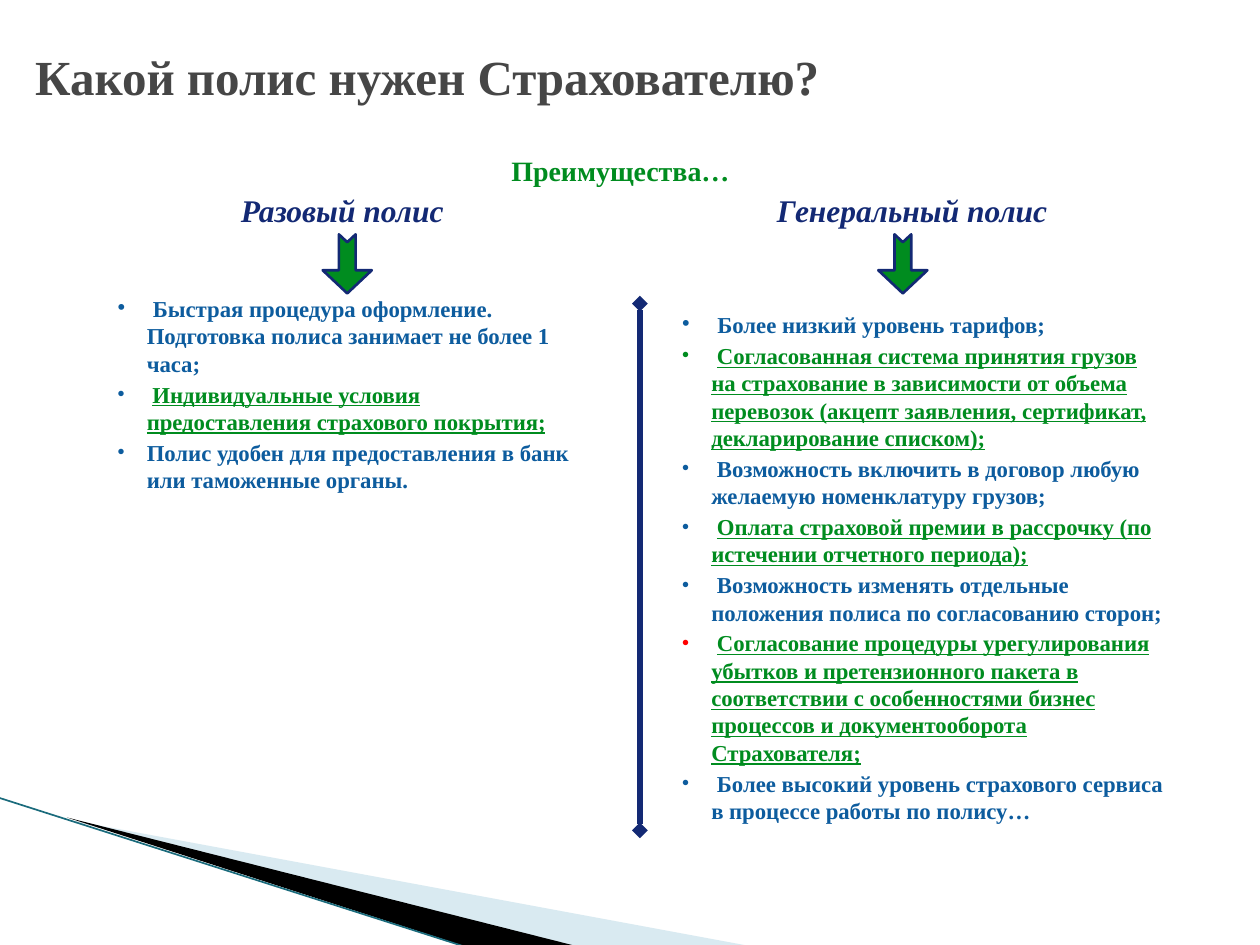
import pptx
import pptx.util
import pptx.dml.color
import pptx.enum.dml
import pptx.enum.shapes
import pptx.enum.text
import pptx.oxml
import pptx.oxml.ns
from lxml import etree
from pptx.util import Cm, Pt

COLORS = {"title": "464646", "green": "008C1F", "navy": "132974", "blue": "0D5C9E",
          "red": "FF0000", "pale": "A0CBDC", "edge": "1A6B7C", "black": "000000"}
FONT = "Times New Roman"

# Each item: colour of the bullet, lead before the text, text, highlighted or not
SINGLE_POLICY = [
    ("blue", " ", "Быстрая процедура оформление. Подготовка полиса занимает не более 1 часа;", False),
    ("blue", " ", "Индивидуальные условия предоставления страхового покрытия;", True),
    ("blue", "", "Полис удобен для предоставления в банк или таможенные органы.", False),
]
GENERAL_POLICY = [
    ("blue", " ", "Более низкий уровень тарифов;", False),
    ("green", " ", "Согласованная система принятия грузов на страхование в зависимости от объема "
     "перевозок (акцепт заявления, сертификат, декларирование списком);", True),
    ("blue", " ", "Возможность включить в договор любую желаемую номенклатуру грузов;", False),
    ("blue", " ", "Оплата страховой премии в рассрочку (по истечении отчетного периода);", True),
    ("blue", " ", "Возможность изменять отдельные положения полиса по согласованию сторон;", False),
    ("red", " ", "Согласование процедуры урегулирования убытков и претензионного пакета в "
     "соответствии с особенностями бизнес процессов и документооборота Страхователя;", True),
    ("blue", " ", "Более высокий уровень страхового сервиса в процессе работы по полису…", False),
]


def rgb(name):
    return pptx.dml.color.RGBColor.from_string(COLORS[name])


def add_child(parent, tag, **attributes):
    child = etree.SubElement(parent, pptx.oxml.ns.qn(tag))
    for key, value in attributes.items():
        child.set(key, value)
    return child


def add_span(para, text, size, color, italic=False, underline=False):
    span = para.add_run()
    span.text = text
    font = span.font
    font.name, font.size, font.bold = FONT, Pt(size), True
    font.italic, font.underline = italic, underline
    font.color.rgb = rgb(color)


def add_box(page, left, top, width, height, wrap=True):
    box = page.shapes.add_textbox(Cm(left), Cm(top), Cm(width), Cm(height))
    box.text_frame.word_wrap = wrap
    box.text_frame.vertical_anchor = pptx.enum.text.MSO_ANCHOR.MIDDLE
    return box


def add_heading(page, left, top, width, height, text, size, color, italic=False):
    box = add_box(page, left, top, width, height, wrap=False)
    para = box.text_frame.paragraphs[0]
    para.alignment = pptx.enum.text.PP_ALIGN.CENTER
    add_span(para, text, size, color, italic)


def add_line(page, start, end, color, width):
    line = page.shapes.add_connector(pptx.enum.shapes.MSO_CONNECTOR.STRAIGHT,
                                     *(Cm(value) for value in start + end))
    line.line.color.rgb = rgb(color)
    line.line.width = Pt(width)
    add_child(line._element.spPr, "a:effectLst")
    return line


def add_wedge(page, points, color, opacity=None):
    corners = [(Cm(x), Cm(y)) for x, y in points]
    builder = page.shapes.build_freeform(*corners[0])
    builder.add_line_segments(corners[1:], close=True)
    wedge = builder.convert_to_shape()
    wedge.shadow.inherit = False
    wedge.line.fill.background()
    wedge.fill.solid()
    wedge.fill.fore_color.rgb = rgb(color)
    if opacity:
        fill = wedge._element.spPr.find(pptx.oxml.ns.qn("a:solidFill"))
        add_child(fill[0], "a:alpha", val=str(opacity * 1000))


def add_corner(page, left, top):
    """Draw the slanted wedges of the lower left corner."""
    def place(*points):
        return [(left + x, top + y) for x, y in points]

    add_wedge(page, place((1.4, 0.45), (15.11, 2.99), (11.58, 2.99)), "pale", 40)
    add_wedge(page, place((1.35, 0.4), (11.61, 2.99), (9.45, 3.02)), "black")
    start, end = place((-0.03, 0), (9.42, 3.02))
    add_line(page, start, end, "edge", 0.95)


def add_title(page, left, top, width, height, text):
    title = page.shapes.title
    title.left, title.top, title.width, title.height = map(Cm, (left, top, width, height))
    frame = title.text_frame
    frame.auto_size = pptx.enum.text.MSO_AUTO_SIZE.NONE
    frame.word_wrap = True
    frame.vertical_anchor = pptx.enum.text.MSO_ANCHOR.MIDDLE
    frame.margin_left = frame.margin_right = frame.margin_top = frame.margin_bottom = 0
    para = frame.paragraphs[0]
    para.alignment = pptx.enum.text.PP_ALIGN.LEFT
    add_span(para, text, 28, "title")


def add_arrow(page, center_x, center_y):
    width, height = 1.19, 0.99
    arrow = page.shapes.add_shape(pptx.enum.shapes.MSO_SHAPE.NOTCHED_RIGHT_ARROW,
                                  Cm(center_x - width / 2), Cm(center_y - height / 2),
                                  Cm(width), Cm(height))
    arrow.rotation = 90
    arrow.adjustments[0], arrow.adjustments[1] = 0.34, 0.47
    arrow.shadow.inherit = False
    arrow.fill.solid()
    arrow.fill.fore_color.rgb = rgb("green")
    arrow.line.color.rgb = rgb("navy")
    arrow.line.width = Pt(1.5)


def add_benefits(page, left, top, width, height, items):
    frame = add_box(page, left, top, width, height).text_frame
    for index, (bullet_color, lead, text, highlighted) in enumerate(items):
        para = frame.add_paragraph() if index else frame.paragraphs[0]
        properties = para._p.get_or_add_pPr()
        properties.set("marL", str(Cm(0.6)))
        properties.set("indent", str(-Cm(0.6)))
        if index:
            para.space_before = Pt(2)
        add_child(properties, "a:buFont", typeface=FONT)
        add_child(properties, "a:buChar", char="•")
        if lead:
            add_span(para, lead, 13 if index else 14, bullet_color)
        add_span(para, text, 13, "green" if highlighted else "blue", underline=highlighted)


def add_divider(page, x, top, height):
    line = add_line(page, (x, top), (x, top + height), "navy", 3)
    outline = line.line._get_or_add_ln()
    for end in ("a:headEnd", "a:tailEnd"):
        add_child(outline, end, type="diamond")


def build_deck():
    deck = pptx.Presentation()
    deck.slide_width, deck.slide_height = Cm(25.4), Cm(19.05)
    page = deck.slides.add_slide(deck.slide_layouts[5])
    add_corner(page, 0, 16.08)
    add_title(page, 0.71, 0.74, 24, 1.6, "Какой полис нужен Страхователю?")
    add_heading(page, 9.91, 3.12, 5.2, 0.61, "Преимущества…", 16, "green")
    add_heading(page, 3.3, 3.73, 7.2, 0.99, "Разовый полис", 18, "navy", italic=True)
    add_heading(page, 15.09, 3.73, 6.6, 0.99, "Генеральный полис", 18, "navy", italic=True)
    for center_x in (7, 18.2):
        add_arrow(page, center_x, 5.32)
    add_benefits(page, 2.11, 6.12, 10, 3.6, SINGLE_POLICY)
    add_benefits(page, 13.49, 6.12, 10.2, 10.6, GENERAL_POLICY)
    add_divider(page, 12.9, 6.12, 10.62)
    deck.save("out.pptx")


if __name__ == "__main__":
    build_deck()
